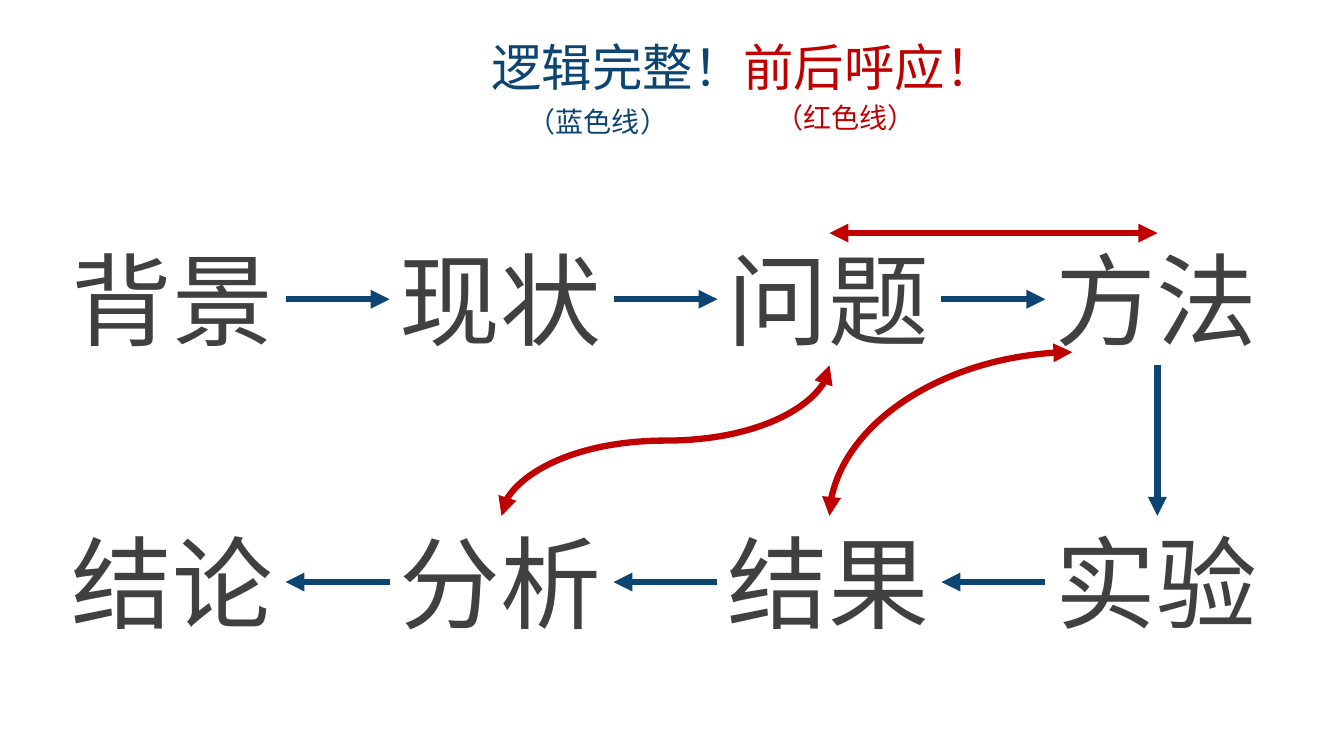
from pptx import Presentation
from pptx.dml.color import RGBColor
from pptx.enum.shapes import MSO_CONNECTOR as Conn
from pptx.enum.text import MSO_AUTO_SIZE as AutoSize
from pptx.oxml.ns import qn
from pptx.util import Pt
from lxml.etree import SubElement

# Content: the steps run right along the top row, then back along the bottom
TOP_ROW = ["背景", "现状", "问题", "方法"]
BOTTOM_ROW = ["结论", "分析", "结果", "实验"]
STEPS = TOP_ROW + BOTTOM_ROW[::-1]
# Headings: left, top, width, height, size name, (text, colour name) runs
HEADINGS = [
    (344, 22.5, 378, 51, "title", [("逻辑完整！", "blue"), ("前后呼应！", "red")]),
    (370, 71, 116, 31.5, "note", [("（蓝色线）", "blue")]),
    (546.5, 68.5, 115.5, 31.5, "note", [("（红色线）", "red")]),
]

THEME = {
    "font": "Noto Sans CJK JP",
    "blue": RGBColor.from_string("0C4472"),
    "red": RGBColor.from_string("C00000"),
    "grey": RGBColor.from_string("404040"),
    "title": 36, "note": 20, "step": 72, "line": 4.5,
}

# Step grid
LEFT, PITCH, STEP_W, STEP_H = 44, 234.25, 160, 94.5
ROW_TOPS = (166.5, 368.5)

prs = Presentation()
prs.slide_width, prs.slide_height = Pt(960), Pt(540)
s = prs.slides.add_slide(prs.slide_layouts[6])


def add_text(left, top, width, height, size, runs):
    sp = s.shapes.add_textbox(Pt(left), Pt(top), Pt(width), Pt(height))
    tf = sp.text_frame
    tf.word_wrap = False
    tf.auto_size = AutoSize.SHAPE_TO_FIT_TEXT
    p = tf.paragraphs[0]
    for text, colour in runs:
        r = p.add_run()
        r.text = text
        r.font.size = Pt(THEME[size])
        r.font.name = THEME["font"]
        r.font.color.rgb = THEME[colour]
        SubElement(r._r.get_or_add_rPr(), qn("a:ea"), typeface=THEME["font"])


def add_arrow(start, end, colour, kind=Conn.STRAIGHT, both=False):
    sp = s.shapes.add_connector(kind, *(Pt(v) for v in (*start, *end)))
    sp.line.color.rgb = THEME[colour]
    sp.line.width = Pt(THEME["line"])
    ln = sp.line._get_or_add_ln()
    for tag in ("a:headEnd", "a:tailEnd") if both else ("a:tailEnd",):
        SubElement(ln, qn(tag), type="triangle")
    SubElement(sp._element.spPr, qn("a:effectLst"))
    return sp


def turn(sp, degrees):
    sp._element.spPr.find(qn("a:xfrm")).set("rot", str(degrees * 60000))


def step_box(i):
    row, col = divmod(i, len(TOP_ROW))
    if row:
        col = len(TOP_ROW) - 1 - col
    return LEFT + col * PITCH, ROW_TOPS[row]


def anchor(step, fx, fy):
    """Point at a fraction of the width and height of a step's box."""
    x, y = step_box(STEPS.index(step))
    return x + fx * STEP_W, y + fy * STEP_H


# Headings and steps
for heading in HEADINGS:
    add_text(*heading)
for i, step in enumerate(STEPS):
    add_text(*step_box(i), STEP_W, STEP_H, "step", [(step, "grey")])

# Blue arrows: each step leads to the next
for a, b in zip(STEPS, STEPS[1:]):
    (ax, ay), (bx, by) = anchor(a, 0, 0), anchor(b, 0, 0)
    if ay != by:
        exit_at, enter_at = (0.5, 1), (0.5, 0)
    elif bx > ax:
        exit_at, enter_at = (1, 0.5), (0, 0.5)
    else:
        exit_at, enter_at = (0, 0.5), (1, 0.5)
    add_arrow(anchor(a, *exit_at), anchor(b, *enter_at), "blue")

# Red arrow: method and question
add_arrow(anchor("方法", 0.5, 0), anchor("问题", 0.5, 0), "red", both=True)

# Red S-curve: question and analysis, a horizontal curve turned a quarter
(x1, y1), (x2, y2) = anchor("问题", 0.5, 1), anchor("分析", 0.5, 0)
cx, cy = (x1 + x2) / 2, (y1 + y2) / 2
half_w, half_h = (y2 - y1) / 2, (x1 - x2) / 2
s_curve = add_arrow((cx - half_w, cy - half_h), (cx + half_w, cy + half_h),
                    "red", Conn.CURVE, both=True)
turn(s_curve, 90)

# Red arc: method and result, a single bend turned half round
(x1, y1), (x2, y2) = anchor("方法", 0.12, 0.9), anchor("结果", 0.5, 0)
arc = add_arrow((x2, y2), (x1, y1), "red", Conn.CURVE, both=True)
arc._element.spPr.find(qn("a:prstGeom")).set("prst", "curvedConnector2")
turn(arc, 180)

prs.save("out.pptx")
